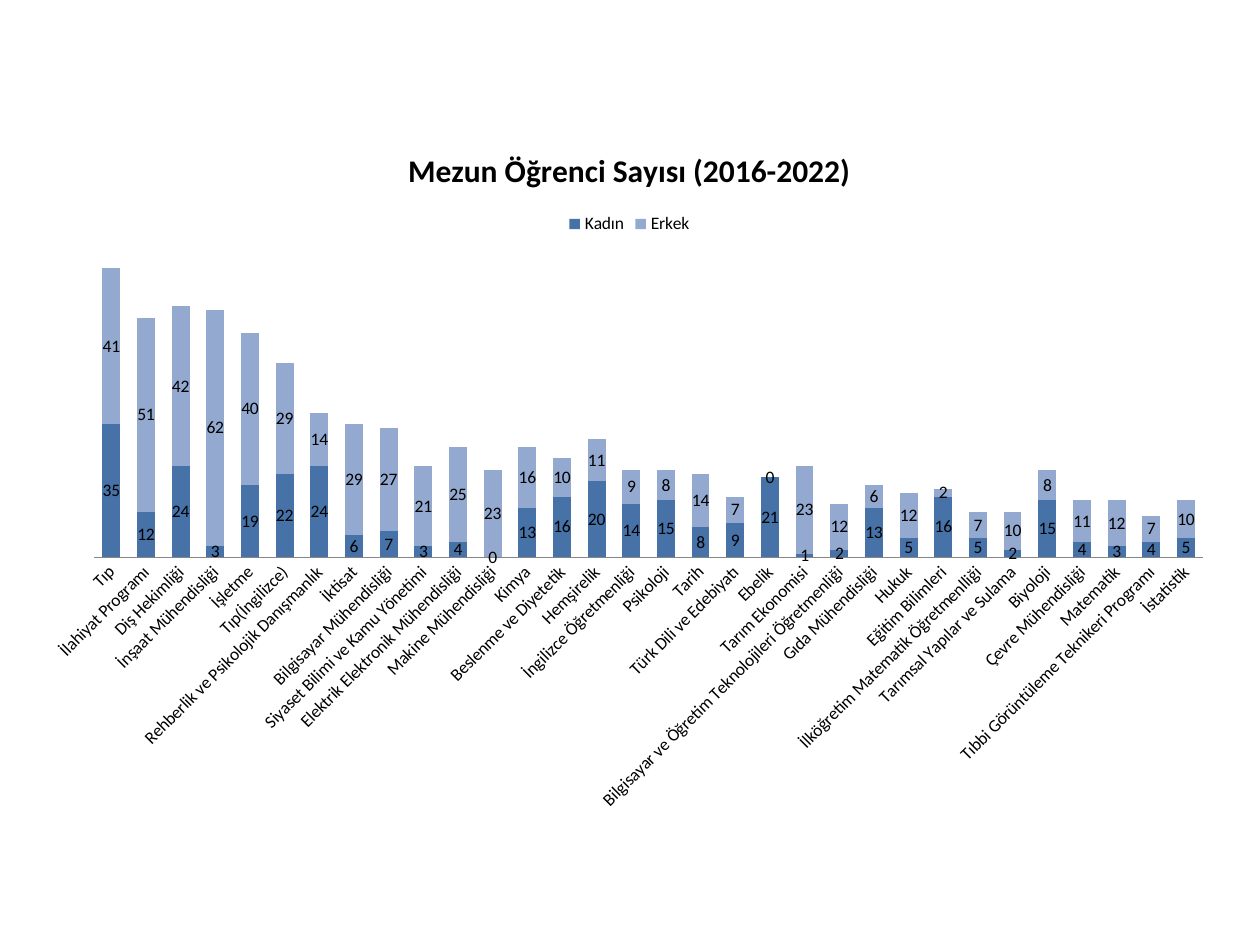
from pptx import Presentation
from pptx.chart.data import CategoryChartData
from pptx.dml.color import RGBColor
from pptx.enum.chart import (XL_CHART_TYPE as ChartType, XL_LABEL_POSITION as LabelPos,
                             XL_LEGEND_POSITION as LegendPos, XL_TICK_MARK as TickMark)
from pptx.util import Inches, Pt

FONT = "Calibri"
TITLE = "Mezun Öğrenci Sayısı (2016-2022)"
SERIES_COLORS = {"Kadın": "4672A8", "Erkek": "93A9CF"}
# Programme, female graduates, male graduates
GRADUATES = [
    ("Tıp", 35, 41),
    ("İlahiyat Programı", 12, 51),
    ("Diş Hekimliği", 24, 42),
    ("İnşaat Mühendisliği", 3, 62),
    ("İşletme", 19, 40),
    ("Tıp(İngilizce)", 22, 29),
    ("Rehberlik ve Psikolojik Danışmanlık", 24, 14),
    ("İktisat", 6, 29),
    ("Bilgisayar Mühendisliği", 7, 27),
    ("Siyaset Bilimi ve Kamu Yönetimi", 3, 21),
    ("Elektrik Elektronik Mühendisliği", 4, 25),
    ("Makine Mühendisliği", 0, 23),
    ("Kimya", 13, 16),
    ("Beslenme ve Diyetetik", 16, 10),
    ("Hemşirelik", 20, 11),
    ("İngilizce Öğretmenliği", 14, 9),
    ("Psikoloji", 15, 8),
    ("Tarih", 8, 14),
    ("Türk Dili ve Edebiyatı", 9, 7),
    ("Ebelik", 21, 0),
    ("Tarım Ekonomisi", 1, 23),
    ("Bilgisayar ve Öğretim Teknolojileri Öğretmenliği", 2, 12),
    ("Gıda Mühendisliği", 13, 6),
    ("Hukuk", 5, 12),
    ("Eğitim Bilimleri", 16, 2),
    ("İlköğretim Matematik Öğretmenlliği", 5, 7),
    ("Tarımsal Yapılar ve Sulama", 2, 10),
    ("Biyoloji", 15, 8),
    ("Çevre Mühendisliği", 4, 11),
    ("Matematik", 3, 12),
    ("Tıbbi Görüntüleme Teknikeri Programı", 4, 7),
    ("İstatistik", 5, 10),
]


def rgb(color):
    return RGBColor.from_string(color)


def style_font(font, size, bold=False):
    font.name, font.size, font.bold = FONT, Pt(size), bold
    font.color.rgb = rgb("000000")


def style_axes(chart):
    programmes, counts = chart.category_axis, chart.value_axis
    programmes.major_tick_mark = programmes.minor_tick_mark = TickMark.NONE
    programmes.format.line.color.rgb = rgb("868686")
    programmes.format.line.width = Pt(0.75)
    programmes.has_major_gridlines = False
    counts.has_major_gridlines = False
    counts.minimum_scale, counts.maximum_scale = 0, 80
    counts.visible = False


def style_bars(plot):
    plot.gap_width, plot.overlap = 95, 100
    for series in plot.series:
        series.format.fill.solid()
        series.format.fill.fore_color.rgb = rgb(SERIES_COLORS[series.name])
        series.invert_if_negative = False
        labels = series.data_labels
        labels.show_value = True
        labels.position = LabelPos.CENTER
        style_font(labels.font, 10)


def add_graduate_chart(slide, left, top, width, height):
    programmes, female, male = zip(*GRADUATES)
    data = CategoryChartData()
    data.categories = programmes
    for name, counts in zip(SERIES_COLORS, (female, male)):
        data.add_series(name, counts)
    chart = slide.shapes.add_chart(ChartType.COLUMN_STACKED, left, top,
                                   width, height, data).chart
    style_font(chart.font, 10)
    chart.has_title = True
    heading = chart.chart_title.text_frame
    heading.text = TITLE
    style_font(heading.paragraphs[0].runs[0].font, 18, bold=True)
    chart.chart_title.include_in_layout = False
    chart.has_legend = True
    chart.legend.position = LegendPos.TOP
    chart.legend.include_in_layout = False
    style_axes(chart)
    style_bars(chart.plots[0])


def main():
    deck = Presentation()
    deck.slide_width, deck.slide_height = Inches(10), Inches(7.5)
    slide = deck.slides.add_slide(deck.slide_layouts[6])
    add_graduate_chart(slide, Inches(0.25), Inches(0.97), Inches(9.49), Inches(5.57))
    deck.save("out.pptx")


if __name__ == "__main__":
    main()
